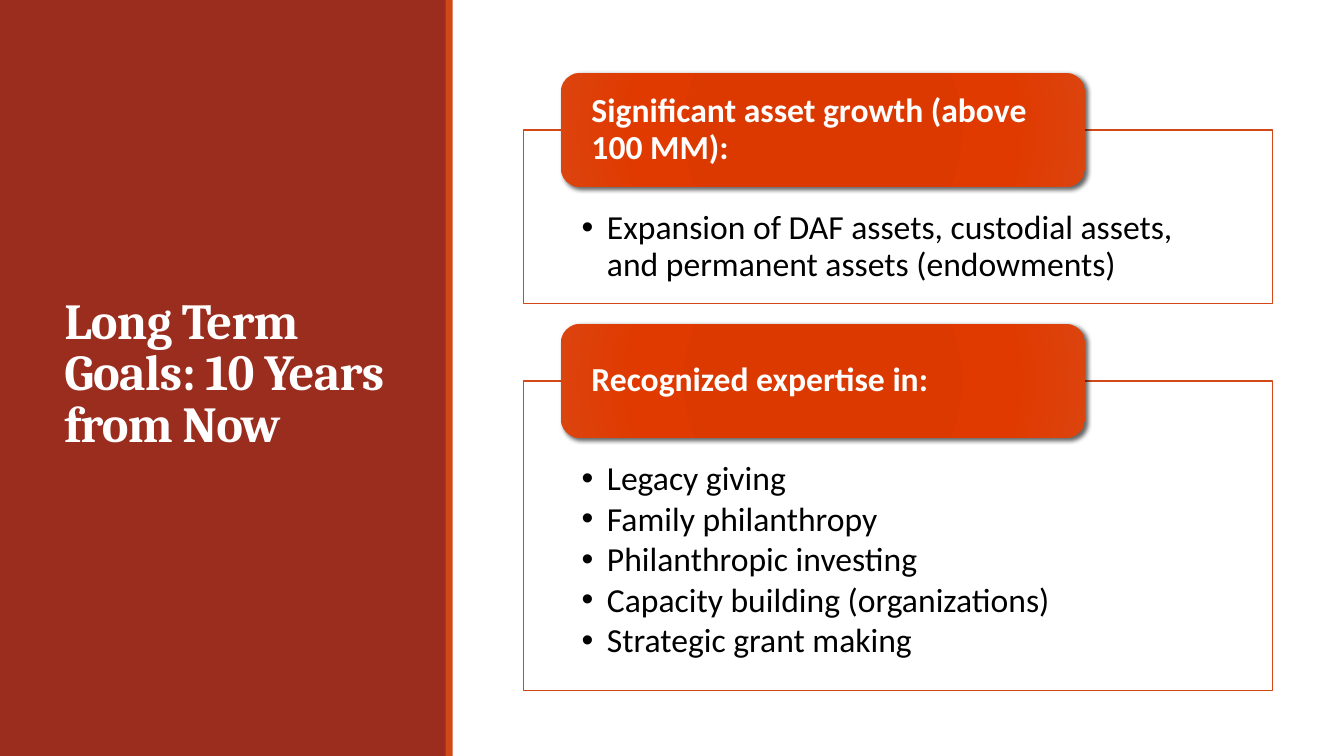
"""Build the long-term goals slide: a title panel beside two labelled goal cards."""
from pptx import Presentation
from pptx.dml.color import RGBColor
from pptx.enum.shapes import MSO_SHAPE
from pptx.enum.text import MSO_ANCHOR, PP_ALIGN
from pptx.oxml import parse_xml
from pptx.oxml.ns import nsdecls, qn
from pptx.util import Inches, Pt

TITLE = "Long Term Goals: 10 Years from Now"
GOALS = [
    {"label": "Significant asset growth (above 100 MM):",
     "height": 1.72,
     "points": ["Expansion of DAF assets, custodial assets, and permanent assets (endowments)"]},
    {"label": "Recognized expertise in:",
     "height": 3.07,
     "points": ["Legacy giving", "Family philanthropy", "Philanthropic investing",
                "Capacity building (organizations)", "Strategic grant making"]},
]

RECTANGLE, ROUNDED = MSO_SHAPE.RECTANGLE, MSO_SHAPE.ROUNDED_RECTANGLE
TOP, MIDDLE, LEFT = MSO_ANCHOR.TOP, MSO_ANCHOR.MIDDLE, PP_ALIGN.LEFT
WHITE = RGBColor(0xFF, 0xFF, 0xFF)
BLACK = RGBColor(0x00, 0x00, 0x00)
BRICK = RGBColor(0x9B, 0x2D, 0x1F)
ORANGE = RGBColor(0xD3, 0x48, 0x17)
LABEL_STOPS = [
    (0, RGBColor(0xDA, 0x39, 0x00)),
    (34, RGBColor(0xDC, 0x39, 0x00)),
    (70, RGBColor(0xE0, 0x3A, 0x00)),
    (100, RGBColor(0xDC, 0x44, 0x0E)),
]

SLIDE_WIDTH, SLIDE_HEIGHT = 13.33, 7.5
PANEL_WIDTH, STRIPE_WIDTH = 4.43, 0.07
CARD_LEFT, CARD_WIDTH, FIRST_TOP, CARD_GAP = 5.19, 7.43, 1.29, 0.77
LABEL_LEFT = CARD_LEFT + CARD_WIDTH * 0.05
LABEL_WIDTH, LABEL_HEIGHT = CARD_WIDTH * 0.7, 1.13


def add_box(page, kind, left, top, width, height, fill=None, line=None):
    box = page.shapes.add_shape(kind, *map(Inches, (left, top, width, height)))
    box.shadow.inherit = False
    if fill is None:
        box.fill.background()
    else:
        box.fill.solid()
        box.fill.fore_color.rgb = fill
    if line is None:
        box.line.fill.background()
    else:
        box.line.color.rgb = line
        box.line.width = Pt(1)
    return box


def write_text(box, lines, *, font, size, color, bold=False, anchor=TOP,
               insets=(0, 0, 0, 0), line_spacing=0.9, after=0, tracking=0, bullet=None):
    frame = box.text_frame
    frame.word_wrap = True
    frame.vertical_anchor = anchor
    frame.margin_left, frame.margin_top, frame.margin_right, frame.margin_bottom = map(Inches, insets)
    for index, line in enumerate(lines):
        para = frame.paragraphs[0] if index == 0 else frame.add_paragraph()
        para.alignment = LEFT
        para.line_spacing = line_spacing
        para.space_after = Pt(after)
        if bullet:
            properties = para._p.get_or_add_pPr()
            properties.set("marL", str(Inches(0.25)))
            properties.set("indent", str(-Inches(0.25)))
            properties.append(parse_xml(f'<a:buFont {nsdecls("a")} typeface="Arial"/>'))
            properties.append(parse_xml(f'<a:buChar {nsdecls("a")} char="{bullet}"/>'))
        span = para.add_run()
        span.text = line
        span.font.name, span.font.size, span.font.bold = font, Pt(size), bold
        span.font.color.rgb = color
        if tracking:
            span._r.get_or_add_rPr().set("spc", str(round(tracking * 100)))


def glaze_label(box):
    stops = "".join(f'<a:gs pos="{share * 1000}"><a:srgbClr val="{color}"/></a:gs>'
                    for share, color in LABEL_STOPS)
    gradient = parse_xml(
        f'<a:gradFill {nsdecls("a")} rotWithShape="1"><a:gsLst>{stops}</a:gsLst><a:path path="circle">'
        '<a:fillToRect l="100000" t="100000" r="100000" b="100000"/></a:path></a:gradFill>')
    shadow = parse_xml(
        f'<a:outerShdw {nsdecls("a")} blurRad="{Pt(3)}" dist="{Pt(2)}" dir="2700000" algn="ctr"'
        ' rotWithShape="0"><a:srgbClr val="000000"><a:alpha val="60000"/></a:srgbClr></a:outerShdw>')
    properties = box._element.spPr
    properties.replace(properties.find(qn("a:noFill")), gradient)
    properties.find(qn("a:effectLst")).append(shadow)


def add_goal(page, goal, top):
    card = add_box(page, RECTANGLE, CARD_LEFT, top, CARD_WIDTH, goal["height"], WHITE, ORANGE)
    write_text(card, goal["points"], font="Calibri", size=24, color=BLACK,
               insets=(0.58, 0.8, 0.58, 0.19), after=3, bullet="•")
    label = add_box(page, ROUNDED, LABEL_LEFT, top - LABEL_HEIGHT / 2, LABEL_WIDTH, LABEL_HEIGHT)
    glaze_label(label)
    write_text(label, [goal["label"]], font="Calibri", size=24, color=WHITE, bold=True,
               anchor=MIDDLE, insets=(0.25, 0.05, 0.25, 0.05))


def main():
    deck = Presentation()
    deck.slide_width, deck.slide_height = Inches(SLIDE_WIDTH), Inches(SLIDE_HEIGHT)
    page = deck.slides.add_slide(deck.slide_layouts[6])
    add_box(page, RECTANGLE, 0, 0, PANEL_WIDTH, SLIDE_HEIGHT, BRICK)
    title = page.shapes.add_textbox(*map(Inches, (0.54, 0.57, 3.37, 6.31)))
    write_text(title, [TITLE], font="Cambria", size=36, color=WHITE, bold=True, anchor=MIDDLE,
               insets=(0.1, 0.05, 0.1, 0.05), line_spacing=0.85, tracking=-0.5)
    add_box(page, RECTANGLE, PANEL_WIDTH - 0.01, 0, STRIPE_WIDTH, SLIDE_HEIGHT, ORANGE)
    top = FIRST_TOP
    for goal in GOALS:
        add_goal(page, goal, top)
        top += goal["height"] + CARD_GAP
    deck.save("out.pptx")


if __name__ == "__main__":
    main()
